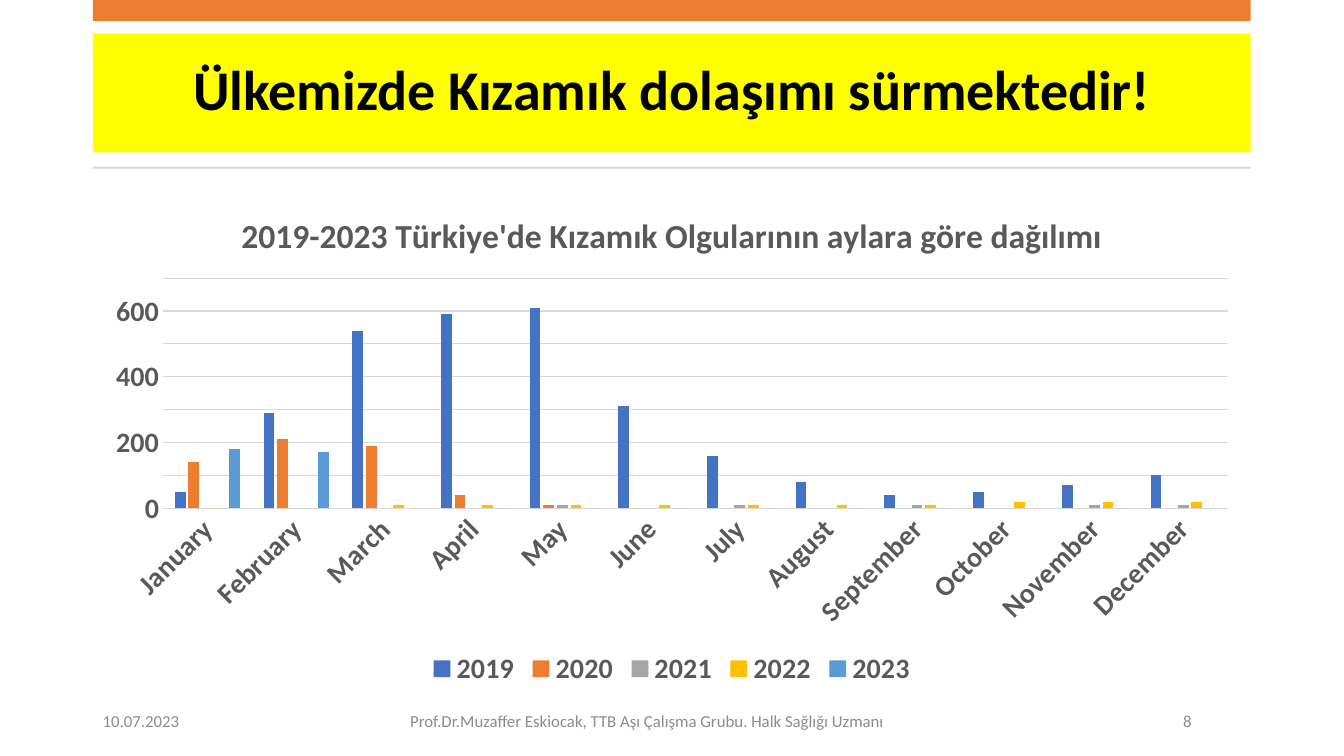
"""Build the slide on monthly measles cases in Türkiye, 2019-2023."""
from pptx import Presentation
from pptx.chart.data import CategoryChartData as Data
from pptx.dml.color import RGBColor as Rgb
from pptx.enum.chart import XL_CHART_TYPE as Kind, XL_LEGEND_POSITION as Side, XL_TICK_MARK as Tick
from pptx.enum.shapes import MSO_SHAPE as Form
from pptx.enum.text import MSO_ANCHOR as Anchor, PP_ALIGN as Align
from pptx.util import Cm, Pt

HEAD = "Ülkemizde Kızamık dolaşımı sürmektedir!"
NAME = "2019-2023 Türkiye'de Kızamık Olgularının aylara göre dağılımı"
MONTHS = ["January", "February", "March", "April", "May", "June", "July",
          "August", "September", "October", "November", "December"]
CASES = {
    "2019": [50, 290, 540, 590, 610, 310, 160, 80, 40, 50, 70, 100],
    "2020": [140, 210, 190, 40, 10, 0, 0, 0, 0, 0, 0, 0],
    "2021": [0, 0, 0, 0, 10, 0, 10, 0, 10, 0, 10, 10],
    "2022": [0, 0, 10, 10, 10, 10, 10, 10, 10, 20, 20, 20],
    "2023": [180, 170, None, 0, 0, 0, 0, 0, 0, 0, 0, 0],
}
FOOT = [
    ("10.07.2023", 7.62, Align.LEFT),
    ("Prof.Dr.Muzaffer Eskiocak, TTB Aşı Çalışma Grubu. Halk Sağlığı Uzmanı", 12.7, Align.CENTER),
    ("8", 7.62, Align.RIGHT),
]
THEME = {
    "face": "Calibri", "head": 40, "name": 24, "chart": 20, "foot": 12,
    "ink": "000000", "text": "595959", "pale": "8C8C8C", "grid": "D9D9D9",
    "flag": "FFFF00", "bar": "ED7D31", "rule": "D5D5D5",
    "years": ["4472C4", "ED7D31", "A5A5A5", "FFC000", "5B9BD5"],
}
LEFT, WIDE = 2.34, 29.18


def apply(item, form):
    for key, val in form.items():
        setattr(item, key, val)


def style(font, size, tone, bold=True):
    apply(font, {"name": THEME["face"], "size": Pt(THEME[size]), "bold": bold})
    font.color.rgb = Rgb.from_string(THEME[tone])


def paint(fill, tone):
    fill.solid()
    fill.fore_color.rgb = Rgb.from_string(tone)


def trace(line):
    paint(line.fill, THEME["grid"])
    line.width = Pt(0.75)


def write(frame, text, size, tone, align, bold):
    apply(frame, {"text": text, "word_wrap": True, "vertical_anchor": Anchor.MIDDLE})
    para = frame.paragraphs[0]
    para.alignment = align
    style(para.runs[0].font, size, tone, bold)


def add_head(slide):
    head = slide.shapes.title
    apply(head, {"left": Cm(LEFT), "top": Cm(0.84), "width": Cm(WIDE), "height": Cm(3)})
    paint(head.fill, THEME["flag"])
    write(head.text_frame, HEAD, "head", "ink", Align.CENTER, True)
    head.text_frame.paragraphs[0].line_spacing = 0.9


def add_band(slide, top, high, tone):
    band = slide.shapes.add_shape(Form.RECTANGLE, Cm(LEFT), Cm(top), Cm(WIDE), Cm(high))
    band.shadow.inherit = False
    paint(band.fill, THEME[tone])
    band.line.fill.background()


def add_graph(slide):
    data = Data()
    data.categories = MONTHS
    for year, vals in CASES.items():
        data.add_series(year, vals)
    box = Cm(LEFT), Cm(4.83), Cm(WIDE), Cm(12.6)
    chart = slide.shapes.add_chart(Kind.COLUMN_CLUSTERED, *box, data).chart
    style(chart.font, "chart", "text")
    apply(chart, {"has_title": True, "has_legend": True})
    title = chart.chart_title.text_frame
    title.text = NAME
    style(title.paragraphs[0].runs[0].font, "name", "text")
    apply(chart.legend, {"position": Side.BOTTOM, "include_in_layout": False})
    style(chart.legend.font, "chart", "text")
    plot = chart.plots[0]
    apply(plot, {"gap_width": 219, "overlap": -27, "vary_by_categories": False})
    for row, tone in zip(plot.series, THEME["years"]):
        paint(row.format.fill, tone)
        row.invert_if_negative = False
    months, count = chart.category_axis, chart.value_axis
    for axis in (months, count):
        apply(axis, {"major_tick_mark": Tick.NONE, "minor_tick_mark": Tick.NONE})
        style(axis.tick_labels.font, "chart", "text")
    trace(months.format.line)
    months._element.txPr.bodyPr.set("rot", "-2700000")
    apply(count, {"minimum_scale": 0, "maximum_scale": 700, "major_unit": 100,
                  "has_major_gridlines": True})
    count.format.line.fill.background()
    trace(count.major_gridlines.format.line)


def add_foot(slide):
    left = LEFT
    for text, wide, align in FOOT:
        box = slide.shapes.add_textbox(Cm(left), Cm(17.65), Cm(wide), Cm(1.01))
        write(box.text_frame, text, "foot", "pale", align, False)
        left += wide


def main():
    deck = Presentation()
    apply(deck, {"slide_width": Cm(33.87), "slide_height": Cm(19.05)})
    slide = deck.slides.add_slide(deck.slide_layouts[5])
    add_head(slide)
    add_band(slide, 0, 0.53, "bar")
    add_band(slide, 4.2, 0.05, "rule")
    add_graph(slide)
    add_foot(slide)
    deck.save("out.pptx")


if __name__ == "__main__":
    main()
